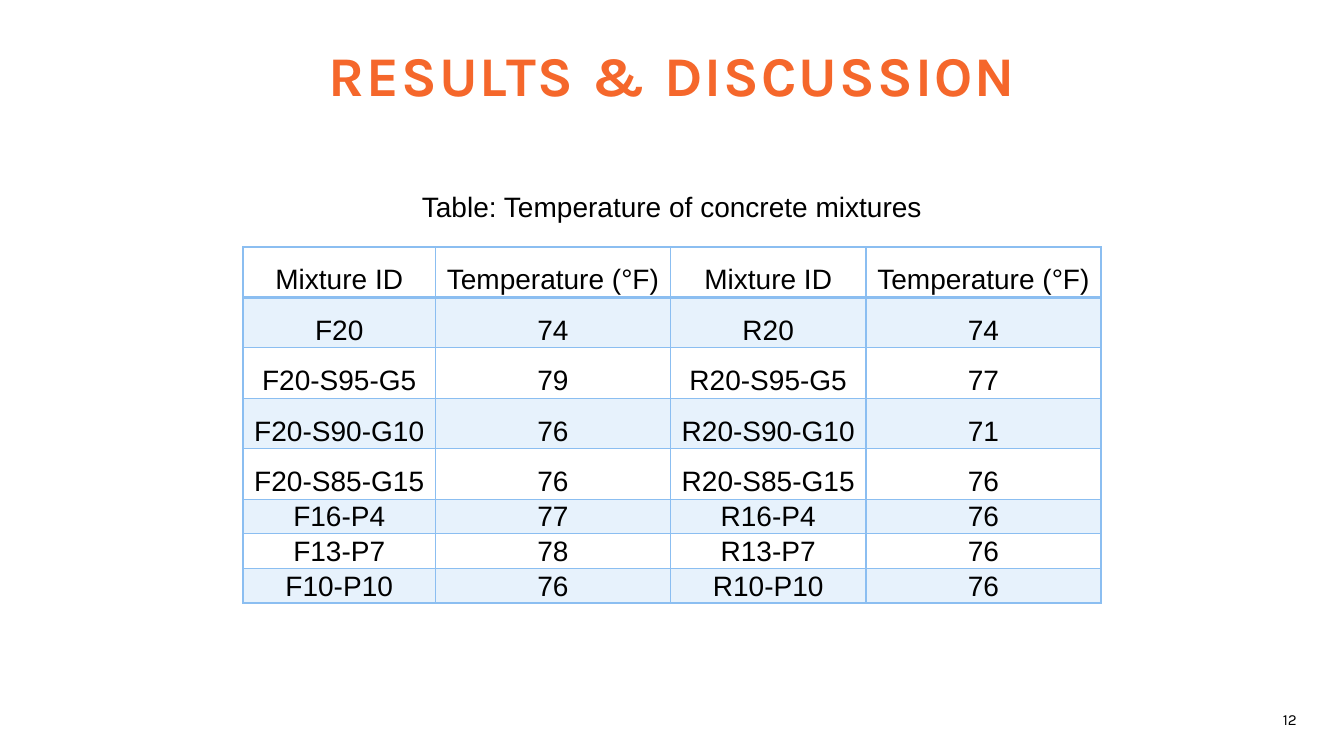
from dataclasses import dataclass

from lxml.etree import SubElement
from pptx import Presentation
from pptx.dml.color import RGBColor
from pptx.enum.text import MSO_ANCHOR as Anchor, MSO_AUTO_SIZE as AutoSize, PP_ALIGN as Align
from pptx.oxml import parse_xml
from pptx.oxml.ns import nsdecls, qn
from pptx.util import Inches, Pt

ORANGE = RGBColor(0xF5, 0x67, 0x2B)
BLUE = RGBColor(0x8B, 0xBE, 0xF1)
BLACK = RGBColor(0, 0, 0)

PAGE_WIDTH, PAGE_HEIGHT = Inches(13.33), Inches(7.5)
BAND_ALPHA = 20


@dataclass
class Label:
    text: str
    left: float  # shares of the page width and height
    top: float
    width: float
    height: float
    size: float
    font: str
    color: RGBColor = BLACK
    bold: bool = False
    spacing: float = 0


@dataclass
class RowStyle:
    height: float
    line_spacing: float
    side: float  # cell margins in inches
    top: float


LABELS = [
    Label("12", 0.938, 0.933, 0.0435, 0.039, 11, "Karla"),
    Label("RESULTS & DISCUSSION", 0, 0.047, 1, 0.103, 40, "Karla", ORANGE, True, 1.5),
    Label("Table: Temperature of concrete mixtures", 0, 0.244, 1, 0.059, 20, "Arial"),
]

HEADER = ("Mixture ID", "Temperature (°F)") * 2
MIXTURES = [
    ("F20", "74", "R20", "74"),
    ("F20-S95-G5", "79", "R20-S95-G5", "77"),
    ("F20-S90-G10", "76", "R20-S90-G10", "71"),
    ("F20-S85-G15", "76", "R20-S85-G15", "76"),
    ("F16-P4", "77", "R16-P4", "76"),
    ("F13-P7", "78", "R13-P7", "76"),
    ("F10-P10", "76", "R10-P10", "76"),
]
COLUMN_WIDTHS = (1.91, 2.33, 1.94, 2.33)
TALL = RowStyle(0.44, 1.5, 0.07, 0)
SHORT = RowStyle(0.34, 1, 0.01, 0.01)
ROW_STYLES = [TALL] * 5 + [SHORT] * 3


def write_text(frame, text: str, *, size: float, font: str, color: RGBColor = BLACK,
               bold: bool = False, spacing: float = 0, line_spacing: float = 1) -> None:
    para = frame.paragraphs[0]
    para.alignment = Align.CENTER
    para.line_spacing = line_spacing
    span = para.add_run()
    span.text = text
    span.font.size = Pt(size)
    span.font.name = font
    span.font.bold = bold
    span.font.color.rgb = color
    if spacing:
        span.font._element.set("spc", str(round(spacing * 100)))


def add_label(page, label: Label) -> None:
    box = page.shapes.add_textbox(
        round(label.left * PAGE_WIDTH), round(label.top * PAGE_HEIGHT),
        round(label.width * PAGE_WIDTH), round(label.height * PAGE_HEIGHT))
    box.text_frame.word_wrap = True
    box.text_frame.auto_size = AutoSize.SHAPE_TO_FIT_TEXT
    write_text(box.text_frame, label.text, size=label.size, font=label.font,
               color=label.color, bold=label.bold, spacing=label.spacing)


def set_borders(cell, top: float, bottom: float) -> None:
    properties = cell._tc.get_or_add_tcPr()
    widths = {"lnL": 1, "lnR": 1, "lnT": top, "lnB": bottom}
    for position, (side, width) in enumerate(widths.items()):
        properties.insert(position, parse_xml(
            f'<a:{side} {nsdecls("a")} w="{Pt(width)}"><a:solidFill>'
            f'<a:srgbClr val="{BLUE}"/></a:solidFill></a:{side}>'))


def fill_cell(cell, banded: bool) -> None:
    if not banded:
        cell.fill.background()
        return
    cell.fill.solid()
    cell.fill.fore_color.rgb = BLUE
    tint = cell._tc.tcPr.find(qn("a:solidFill")).find(qn("a:srgbClr"))
    SubElement(tint, qn("a:alpha")).set("val", str(BAND_ALPHA * 1000))


def add_temperature_table(page) -> None:
    rows = [HEADER, *MIXTURES]
    height = sum(style.height for style in ROW_STYLES)
    table = page.shapes.add_table(
        len(rows), len(HEADER), Inches(2.41), Inches(2.45),
        Inches(sum(COLUMN_WIDTHS)), Inches(height)).table
    table.first_row = table.horz_banding = False
    for column, width in zip(table.columns, COLUMN_WIDTHS):
        column.width = Inches(width)
    for index, (texts, style) in enumerate(zip(rows, ROW_STYLES)):
        table.rows[index].height = Inches(style.height)
        for cell, text in zip(table.rows[index].cells, texts):
            cell.vertical_anchor = Anchor.MIDDLE
            cell.margin_left = cell.margin_right = Inches(style.side)
            cell.margin_top, cell.margin_bottom = Inches(style.top), 0
            write_text(cell.text_frame, text, size=20, font="Arial",
                       line_spacing=style.line_spacing)
            fill_cell(cell, banded=index % 2 == 1)
            # The rule under the header is twice as thick
            set_borders(cell, top=2 if index == 1 else 1, bottom=2 if index == 0 else 1)


def main() -> None:
    deck = Presentation()
    deck.slide_width, deck.slide_height = PAGE_WIDTH, PAGE_HEIGHT
    page = deck.slides.add_slide(deck.slide_layouts[6])

    # Page number, title and caption
    for label in LABELS:
        add_label(page, label)

    # Temperatures by mixture
    add_temperature_table(page)

    deck.save("out.pptx")


if __name__ == "__main__":
    main()
